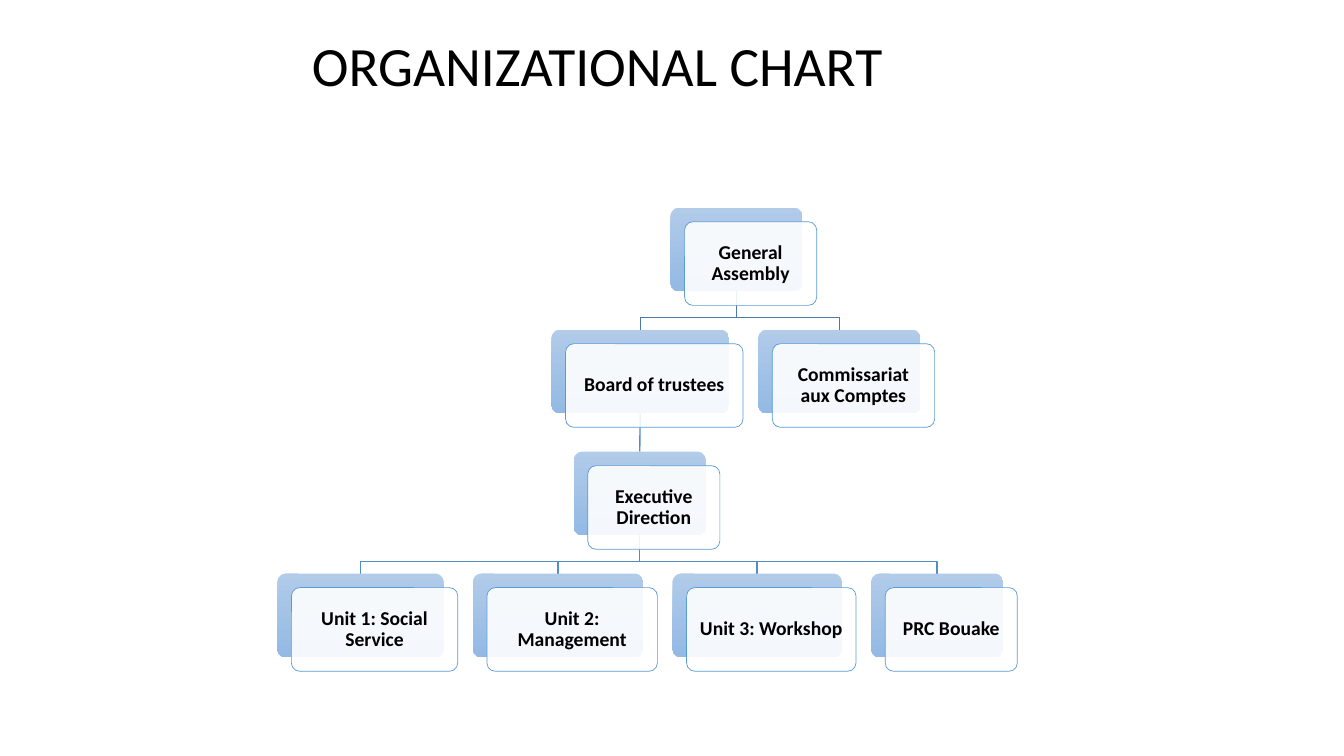
from pptx import Presentation
from pptx import util as u
from pptx.dml.color import RGBColor
from pptx.enum import shapes, text
from pptx.oxml.ns import qn
from lxml import etree

BLACK = RGBColor(0x00, 0x00, 0x00)
WHITE = RGBColor(0xFF, 0xFF, 0xFF)
PALE_BLUE = RGBColor(0xB1, 0xCB, 0xE9)
SKY_BLUE = RGBColor(0x93, 0xB9, 0xE4)
EDGE_BLUE = RGBColor(0x5B, 0x9B, 0xD5)
UPPER_LINK = RGBColor(0x49, 0x7C, 0xAB)
LOWER_LINK = RGBColor(0x53, 0x8D, 0xC1)

TOP_ROW, ROW_STEP, CARD_HEIGHT = 2.06, 1.21, 0.83
FRONT_SHIFT = 0.14
BEND_DROP = 0.26

CARDS = {
    "General Assembly": (0, 6.65, 1.31),
    "Board of trustees": (1, 5.47, 1.76),
    "Executive Direction": (2, 5.69, 1.31),
    "Unit 1: Social Service": (3, 2.75, 1.65),
    "Unit 2: Management": (3, 4.69, 1.69),
    "Unit 3: Workshop": (3, 6.67, 1.68),
    "PRC Bouake": (3, 8.64, 1.31),
    "Commissariat aux Comptes": (1, 7.52, 1.61),
}

BENT_LINKS = [
    ("General Assembly", "Commissariat aux Comptes", UPPER_LINK),
    ("Executive Direction", "PRC Bouake", LOWER_LINK),
    ("Executive Direction", "Unit 3: Workshop", LOWER_LINK),
    ("Executive Direction", "Unit 2: Management", LOWER_LINK),
    ("Executive Direction", "Unit 1: Social Service", LOWER_LINK),
    ("General Assembly", "Board of trustees", UPPER_LINK),
]


class ChartPainter:
    """Draws the title, cards and links of an organizational chart on one slide."""

    title_font = {"name": "Calibri", "size": u.Pt(39.6), "bold": False}
    card_font = {"name": "Calibri", "size": u.Pt(14), "bold": True}
    margins = {f"margin_{side}": u.Inches(0.08)
               for side in ("left", "right", "top", "bottom")}

    def __init__(self, page):
        self.page = page

    def label(self, frame, words, font):
        settings = {"word_wrap": True, "auto_size": text.MSO_AUTO_SIZE.NONE,
                    "vertical_anchor": text.MSO_ANCHOR.MIDDLE}
        for name, value in settings.items():
            setattr(frame, name, value)
        para = frame.paragraphs[0]
        para.alignment = text.PP_ALIGN.CENTER
        para.line_spacing = 0.9
        span = para.add_run()
        span.text = words
        for name, value in font.items():
            setattr(span.font, name, value)
        span.font.color.rgb = BLACK

    def title(self, words, left, top, width, height):
        box = self.page.shapes.title
        place = {"left": left, "top": top, "width": width, "height": height}
        for name, value in place.items():
            setattr(box, name, u.Inches(value))
        self.label(box.text_frame, words, self.title_font)

    def panel(self, left, top, width):
        box = self.page.shapes.add_shape(
            shapes.MSO_SHAPE.ROUNDED_RECTANGLE, u.Inches(left), u.Inches(top),
            u.Inches(width), u.Inches(CARD_HEIGHT))
        box.adjustments[0] = 0.1
        box.shadow.inherit = False
        return box

    def card(self, words, level, left, width):
        top = TOP_ROW + ROW_STEP * level
        back = self.panel(left, top, width)
        back.line.fill.background()
        back.fill.gradient()
        back.fill.gradient_angle = 270
        for stop, position, color in zip(back.fill.gradient_stops, (0, 1),
                                         (PALE_BLUE, SKY_BLUE)):
            stop.position = position
            stop.color.rgb = color

        front = self.panel(left + FRONT_SHIFT, top + FRONT_SHIFT, width)
        front.fill.solid()
        front.fill.fore_color.rgb = WHITE
        paint = front.element.spPr.find(qn("a:solidFill"))
        etree.SubElement(paint[0], qn("a:alpha"), val="90000")
        front.line.color.rgb = EDGE_BLUE
        front.line.width = u.Pt(0.5)
        for name, value in self.margins.items():
            setattr(front.text_frame, name, value)
        self.label(front.text_frame, words, self.card_font)
        return back

    def finish_link(self, link, color, lowest_card):
        link.line.color.rgb = color
        link.line.width = u.Pt(1)
        lowest_card.element.addprevious(link.element)

    def bent_link(self, parent, child, color, lowest_card):
        start_x = parent.left + parent.width // 2
        start_y = parent.top + parent.height
        end_x = child.left + child.width // 2
        bend_y = start_y + u.Inches(BEND_DROP)
        builder = self.page.shapes.build_freeform(start_x, start_y)
        builder.add_line_segments(
            [(start_x, bend_y), (end_x, bend_y), (end_x, child.top)], close=False)
        link = builder.convert_to_shape()
        link.fill.background()
        link.shadow.inherit = False
        self.finish_link(link, color, lowest_card)

    def straight_link(self, parent, child, color, lowest_card):
        link = self.page.shapes.add_connector(shapes.MSO_CONNECTOR.STRAIGHT, 0, 0, 0, 0)
        link.begin_connect(parent, 2)
        link.end_connect(child, 0)
        self.finish_link(link, color, lowest_card)
        etree.SubElement(link.element.spPr, qn("a:effectLst"))


def main():
    deck = Presentation()
    deck.slide_width = u.Inches(13.33)
    deck.slide_height = u.Inches(7.5)
    painter = ChartPainter(deck.slides.add_slide(deck.slide_layouts[5]))
    painter.title("ORGANIZATIONAL CHART", 2.73, 0.06, 6.39, 1.25)
    cards = {words: painter.card(words, *place) for words, place in CARDS.items()}
    lowest_card = cards["General Assembly"]
    for parent, child, color in BENT_LINKS:
        painter.bent_link(cards[parent], cards[child], color, lowest_card)
    painter.straight_link(cards["Board of trustees"], cards["Executive Direction"],
                          LOWER_LINK, lowest_card)
    deck.save("out.pptx")


if __name__ == "__main__":
    main()
